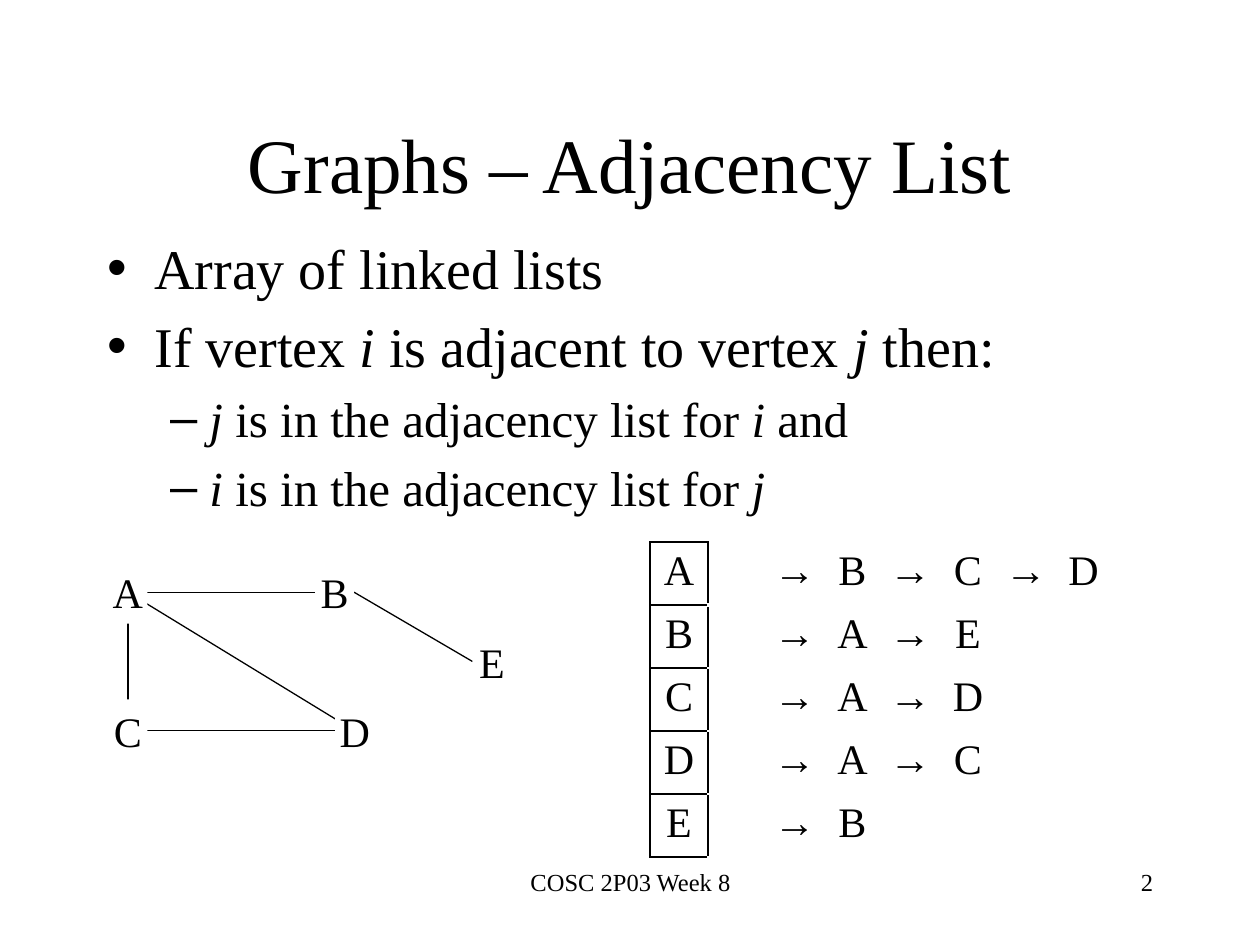
from dataclasses import dataclass

from lxml import etree
from pptx import Presentation
from pptx.dml.color import RGBColor
from pptx.enum.shapes import MSO_CONNECTOR, MSO_SHAPE
from pptx.enum.text import MSO_ANCHOR, MSO_AUTO_SIZE, PP_ALIGN
from pptx.oxml.ns import qn
from pptx.util import Inches, Pt

LEFT, CENTER, RIGHT = PP_ALIGN.LEFT, PP_ALIGN.CENTER, PP_ALIGN.RIGHT
MIDDLE = MSO_ANCHOR.MIDDLE
NO_FIT, GROW = MSO_AUTO_SIZE.NONE, MSO_AUTO_SIZE.SHAPE_TO_FIT_TEXT
STRAIGHT = MSO_CONNECTOR.STRAIGHT
RECTANGLE = MSO_SHAPE.RECTANGLE
LEFT_SIDE, RIGHT_SIDE = 1, 3


@dataclass(frozen=True)
class Theme:
    font: str = "Times New Roman"
    ink: str = "000000"
    paper: str = "FFFFFF"
    title: int = 44
    bullet: int = 32
    sub_bullet: int = 28
    label: int = 24
    footer: int = 14
    edge: float = 0.75


@dataclass(frozen=True)
class Vertex:
    name: str
    left: float
    top: float
    width: float = 0.31
    height: float = 0.5

    @property
    def center(self) -> tuple[float, float]:
        return self.left + self.width / 2, self.top + self.height / 2


@dataclass(frozen=True)
class Edge:
    start: str
    end: str
    start_side: int | None = None
    end_side: int | None = None


@dataclass(frozen=True)
class Bullet:
    level: int
    spans: tuple[str, ...]
    first_italic: bool = False


THEME = Theme()

BULLETS = (
    Bullet(0, ("Array of linked lists",)),
    Bullet(0, ("If vertex ", "i", " is adjacent to vertex ", "j", " then:")),
    Bullet(1, ("j", " is in the adjacency list for ", "i", " and"), True),
    Bullet(1, ("i", " is in the adjacency list for ", "j"), True),
)

VERTICES = (
    Vertex("A", 0.86, 4.45),
    Vertex("C", 0.86, 5.55),
    Vertex("B", 2.5, 4.45),
    Vertex("D", 2.66, 5.55),
    Vertex("E", 3.75, 5),
)

EDGES = (
    Edge("A", "B", end_side=RIGHT_SIDE),
    Edge("A", "C"),
    Edge("A", "D"),
    Edge("B", "E", RIGHT_SIDE, LEFT_SIDE),
    Edge("C", "D"),
)

NEIGHBOURS = {"A": "BCD", "B": "AE", "C": "AD", "D": "AC", "E": "B"}


def place(shape, left: float, top: float, width: float, height: float) -> None:
    shape.left, shape.top = Inches(left), Inches(top)
    shape.width, shape.height = Inches(width), Inches(height)


def format_para(para, size: int, align: PP_ALIGN) -> None:
    para.alignment = align
    for span in para.runs:
        span.font.name = THEME.font
        span.font.size = Pt(size)
        span.font.color.rgb = RGBColor.from_string(THEME.ink)


def write(frame, text: str, size: int, align: PP_ALIGN = CENTER) -> None:
    frame.text = text
    format_para(frame.paragraphs[0], size, align)


def write_bullets(frame, bullets: tuple[Bullet, ...]) -> None:
    frame.auto_size = NO_FIT
    for index, bullet in enumerate(bullets):
        para = frame.add_paragraph() if index else frame.paragraphs[0]
        para.level = bullet.level
        for position, text in enumerate(bullet.spans):
            span = para.add_run()
            span.text = text
            span.font.italic = (position % 2 == 0) == bullet.first_italic
        size = THEME.sub_bullet if bullet.level else THEME.bullet
        format_para(para, size, LEFT)


def add_footer(page, text: str, left: float, width: float, align: PP_ALIGN) -> None:
    box = page.shapes.add_textbox(Inches(left), Inches(6.83), Inches(width), Inches(0.5))
    box.text_frame.word_wrap = True
    write(box.text_frame, text, THEME.footer, align)


def add_edge(page, start: Vertex, end: Vertex):
    points = [Inches(value) for value in start.center + end.center]
    connector = page.shapes.add_connector(STRAIGHT, *points)
    connector.line.color.rgb = RGBColor.from_string(THEME.ink)
    connector.line.width = Pt(THEME.edge)
    etree.SubElement(connector._element.spPr, qn("a:effectLst"))
    return connector


def add_vertex(page, vertex: Vertex):
    box = page.shapes.add_shape(RECTANGLE, 0, 0, 0, 0)
    place(box, vertex.left, vertex.top, vertex.width, vertex.height)
    box.shadow.inherit = False
    box.fill.solid()
    box.fill.fore_color.rgb = RGBColor.from_string(THEME.paper)
    box.line.fill.background()
    frame = box.text_frame
    frame.margin_left = frame.margin_right = 0
    frame.vertical_anchor = MIDDLE
    frame.auto_size = GROW
    write(frame, vertex.name, THEME.label)
    return box


def add_graph(page) -> None:
    by_name = {vertex.name: vertex for vertex in VERTICES}
    connectors = [add_edge(page, by_name[edge.start], by_name[edge.end]) for edge in EDGES]
    boxes = {vertex.name: add_vertex(page, vertex) for vertex in VERTICES}
    for edge, connector in zip(EDGES, connectors):
        if edge.start_side is not None:
            connector.begin_connect(boxes[edge.start], edge.start_side)
        if edge.end_side is not None:
            connector.end_connect(boxes[edge.end], edge.end_side)


def set_borders(cell, column: int, row: int) -> None:
    own = THEME.paper if column else THEME.ink
    left = THEME.ink if column <= 1 else THEME.paper
    bottom_width = 3 if column and row == 0 else 1
    borders = (("L", left, 1), ("R", own, 1), ("T", own, 1), ("B", own, bottom_width))
    properties = cell._tc.get_or_add_tcPr()
    for index, (side, color, width) in enumerate(borders):
        line = etree.Element(qn(f"a:ln{side}"), w=str(Pt(width)))
        fill = etree.SubElement(line, qn("a:solidFill"))
        etree.SubElement(fill, qn("a:srgbClr"), val=color)
        properties.insert(index, line)


def add_adjacency_table(page) -> None:
    columns = 2 + 2 * max(map(len, NEIGHBOURS.values()))
    table = page.shapes.add_table(
        len(NEIGHBOURS), columns, Inches(5.16), Inches(4.3), Inches(3.67), Inches(2.5)
    ).table
    table.first_row = table.horz_banding = False
    for row, (name, neighbours) in enumerate(NEIGHBOURS.items()):
        texts = [name, ""] + [text for other in neighbours for text in ("→", other)]
        for column in range(columns):
            cell = table.cell(row, column)
            cell.margin_left = cell.margin_right = 0
            cell.fill.solid()
            cell.fill.fore_color.rgb = RGBColor.from_string(THEME.paper)
            set_borders(cell, column, row)
            if column < len(texts) and texts[column]:
                write(cell.text_frame, texts[column], THEME.label)


def main() -> None:
    deck = Presentation()
    deck.slide_width, deck.slide_height = Inches(10), Inches(7.5)
    page = deck.slides.add_slide(deck.slide_layouts[1])
    title, body = page.placeholders
    place(title, 0.75, 0.67, 8.5, 1.25)
    title.text_frame.vertical_anchor = MIDDLE
    write(title.text_frame, "Graphs – Adjacency List", THEME.title)
    place(body, 0.75, 1.8, 8.5, 4.87)
    write_bullets(body.text_frame, BULLETS)
    add_footer(page, "COSC 2P03 Week 8", 3.42, 3.17, CENTER)
    add_footer(page, "2", 7.17, 2.08, RIGHT)
    add_graph(page)
    add_adjacency_table(page)
    deck.save("out.pptx")


if __name__ == "__main__":
    main()
